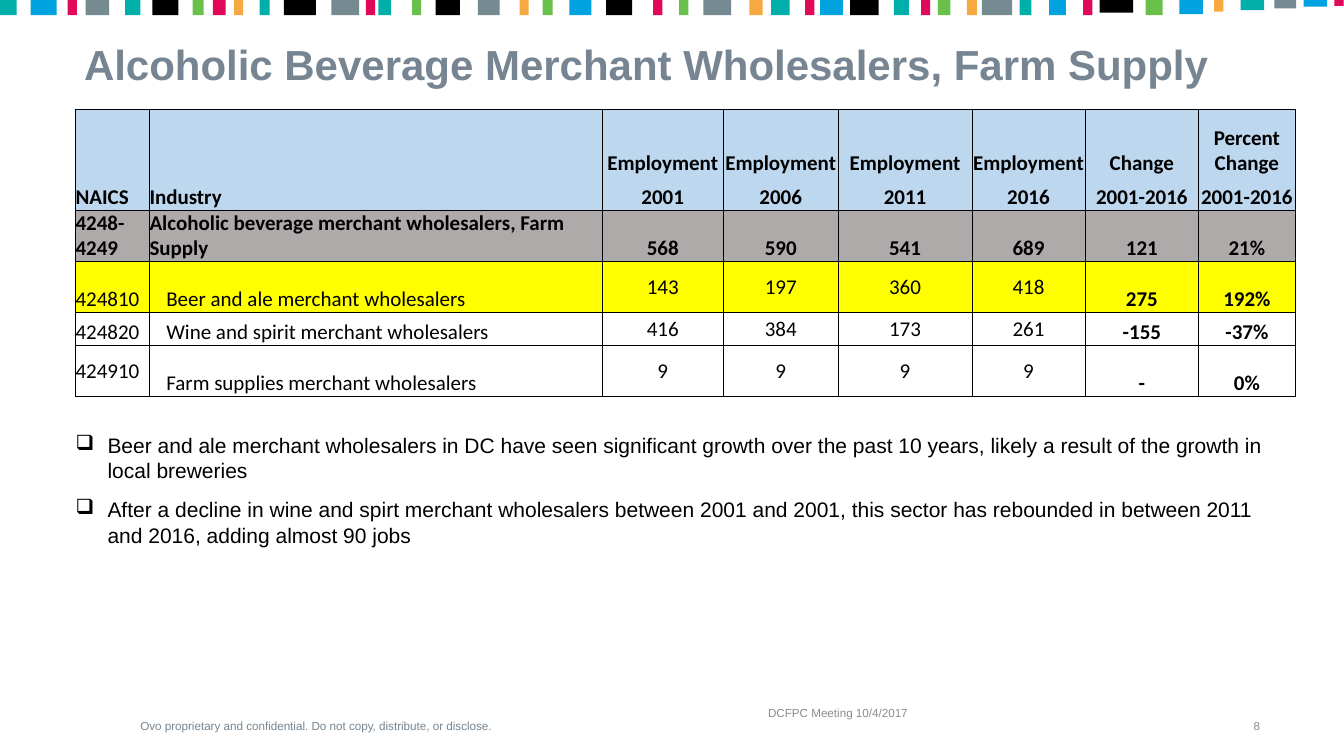
from lxml import etree
from pptx import Presentation
from pptx.dml.color import RGBColor
from pptx.enum.shapes import MSO_SHAPE
from pptx.enum.text import MSO_ANCHOR, PP_ALIGN
from pptx.oxml.ns import qn
from pptx.util import Inches, Pt

RECT = MSO_SHAPE.RECTANGLE
LEFT, CENTER, RIGHT = PP_ALIGN.LEFT, PP_ALIGN.CENTER, PP_ALIGN.RIGHT
TOP, MIDDLE, BOTTOM = MSO_ANCHOR.TOP, MSO_ANCHOR.MIDDLE, MSO_ANCHOR.BOTTOM

BLACK = RGBColor(0x00, 0x00, 0x00)
SLATE = RGBColor(0x76, 0x85, 0x91)
MUTED = RGBColor(0x8C, 0x8C, 0x8C)
HEADER_BLUE = RGBColor(0xBD, 0xD7, 0xEE)
TOTAL_GRAY = RGBColor(0xAE, 0xAA, 0xAA)
YELLOW = RGBColor(0xFF, 0xFF, 0x00)
TEAL = RGBColor(0x00, 0xAF, 0xAA)
SKY = RGBColor(0x00, 0xA2, 0xE0)
PINK = RGBColor(0xE1, 0x08, 0x59)
GRAY = RGBColor(0x76, 0x8A, 0x91)
GREEN = RGBColor(0x69, 0xC1, 0x4C)
AMBER = RGBColor(0xF6, 0xA9, 0x41)

BAR_HEIGHT = 0.18
BARS = [
    (0.1, 0.2, TEAL), (0.52, 0.31, SKY), (0.86, 0.11, PINK),
    (1.16, 0.28, GRAY), (1.58, 0.18, TEAL), (1.97, 0.31, BLACK),
    (2.36, 0.13, GREEN), (2.61, 0.15, PINK), (2.84, 0.11, AMBER),
    (3.15, 0.12, TEAL), (3.57, 0.38, BLACK), (4.11, 0.33, GRAY),
    (4.41, 0.11, PINK), (4.58, 0.15, TEAL), (4.96, 0.11, GREEN),
    (5.33, 0.29, BLACK), (5.82, 0.26, GRAY), (6.24, 0.11, AMBER),
    (6.52, 0.12, GREEN), (6.91, 0.26, SKY), (7.37, 0.31, BLACK),
    (7.83, 0.11, PINK), (8.14, 0.11, GREEN), (8.54, 0.33, GRAY),
    (9.0, 0.16, AMBER), (9.29, 0.22, TEAL), (9.64, 0.11, PINK),
    (9.9, 0.27, SKY), (10.29, 0.34, BLACK), (10.73, 0.18, TEAL),
    (11.02, 0.11, PINK), (11.24, 0.15, GREEN), (11.57, 0.12, AMBER),
    (11.87, 0.36, GRAY), (12.21, 0.14, TEAL), (12.59, 0.2, SKY),
    (12.95, 0.11, PINK), (13.29, 0.4, BLACK, 0.15), (13.74, 0.2, GREEN),
    (14.18, 0.28, SKY, 0.17), (14.51, 0.11, AMBER, 0.14),
    (14.91, 0.28, TEAL, 0.12), (15.3, 0.26, GRAY, 0.1),
    (15.66, 0.28, SKY, 0.08), (15.94, 0.11, PINK, 0.07),
]

COL_WIDTHS = [0.88, 5.39, 1.44, 1.37, 1.59, 1.35, 1.35, 1.15]
ROW_HEIGHTS = [0.8, 0.4, 0.61, 0.61, 0.39, 0.61]
ROW_FILLS = [HEADER_BLUE, HEADER_BLUE, TOTAL_GRAY, YELLOW, None, None]
HEADER_ROWS, BOLD_ROWS = 2, 3
ROWS = [
    ["", "", "Employment", "Employment", "Employment", "Employment",
     "Change", "Percent Change"],
    ["NAICS", "Industry", "2001", "2006", "2011", "2016", "2001-2016", "2001-2016"],
    ["4248-4249", "Alcoholic beverage merchant wholesalers, Farm Supply",
     "568", "590", "541", "689", "121", "21%"],
    ["424810", "Beer and ale merchant wholesalers",
     "143", "197", "360", "418", "275", "192%"],
    ["424820", "Wine and spirit merchant wholesalers",
     "416", "384", "173", "261", "-155", "-37%"],
    ["424910", "Farm supplies merchant wholesalers", "9", "9", "9", "9", "-", "0%"],
]
BULLETS = [
    "Beer and ale merchant wholesalers in DC have seen significant growth over the "
    "past 10 years, likely a result of the growth in local breweries",
    "After a decline in wine and spirt merchant wholesalers between 2001 and 2001, "
    "this sector has rebounded in between 2011 and 2016, adding almost 90 jobs",
]


def set_font(font, size, color, name="Arial", bold=False):
    values = {"size": Pt(size), "name": name, "bold": bold}
    for key, value in values.items():
        setattr(font, key, value)
    font.color.rgb = color


def add_bar(s, center, width, color, height=BAR_HEIGHT):
    sp = s.shapes.add_shape(RECT, Inches(center - width / 2), 0,
                            Inches(width), Inches(height))
    sp.shadow.inherit = False
    sp.fill.solid()
    sp.fill.fore_color.rgb = color
    sp.line.fill.background()


def set_title(s, text):
    sp = s.shapes.title
    frame = {"left": 0.9, "top": 0.33, "width": 14.2, "height": 0.94}
    for key, value in frame.items():
        setattr(sp, key, Inches(value))
    tf = sp.text_frame
    tf.vertical_anchor = MIDDLE
    p = tf.paragraphs[0]
    p.alignment = LEFT
    p.line_spacing = 0.9
    r = p.add_run()
    r.text = text
    set_font(r.font, 36, SLATE, bold=True)


def add_box(s, box, anchor, bottom=0):
    tf = s.shapes.add_textbox(*map(Inches, box)).text_frame
    values = {"word_wrap": True, "vertical_anchor": anchor, "margin_left": 0,
              "margin_right": 0, "margin_top": 0, "margin_bottom": Inches(bottom)}
    for key, value in values.items():
        setattr(tf, key, value)
    return tf


def add_footer(s, text, left, width, align, color, bottom=0):
    p = add_box(s, (left, 8.34, width, 0.39), BOTTOM, bottom).paragraphs[0]
    p.alignment = align
    r = p.add_run()
    r.text = text
    set_font(r.font, 10, color)


def add_bullets(s, texts):
    tf = add_box(s, (0.9, 5.15, 14.22, 1.58), TOP)
    for i, text in enumerate(texts):
        p = tf.add_paragraph() if i else tf.paragraphs[0]
        pPr = p._p.get_or_add_pPr()
        pPr.set("marL", str(Inches(0.38)))
        pPr.set("indent", str(-Inches(0.38)))
        etree.SubElement(pPr, qn("a:buChar"), char="❑")
        if i:
            p.space_before = Pt(12)
        r = p.add_run()
        r.text = text
        set_font(r.font, 18, BLACK)


def set_borders(cell, widths):
    tcPr = cell._tc.get_or_add_tcPr()
    for side, width in zip("LRTB", widths):
        ln = etree.SubElement(tcPr, qn("a:ln" + side), w=str(Pt(width)))
        if width:
            fill = etree.SubElement(ln, qn("a:solidFill"))
            etree.SubElement(fill, qn("a:srgbClr"), val=str(BLACK))
        else:
            etree.SubElement(ln, qn("a:noFill"))


def format_cell(cell, row, col):
    last_row, last_col = len(ROWS) - 1, len(COL_WIDTHS) - 1
    set_borders(cell, (1 if col == 0 else 0.5,
                       1 if col == last_col else 0.5,
                       1 if row == 0 else 0 if row == 1 else 0.5,
                       1 if row == last_row else 0 if row == 0 else 0.5))
    if ROW_FILLS[row]:
        cell.fill.solid()
        cell.fill.fore_color.rgb = ROW_FILLS[row]
    else:
        cell.fill.background()
    detail = row >= BOLD_ROWS
    centered = detail and (2 <= col <= 5 or (row == last_row and col == 0))
    values = {"margin_left": Inches(0.2) if detail and col == 1 else 0,
              "margin_right": 0, "margin_top": 0, "margin_bottom": 0,
              "vertical_anchor": MIDDLE if centered else BOTTOM}
    for key, value in values.items():
        setattr(cell, key, value)
    p = cell.text_frame.paragraphs[0]
    p.alignment = CENTER if col >= 2 else LEFT
    if ROWS[row][col]:
        r = p.add_run()
        r.text = ROWS[row][col]
        set_font(r.font, 18, BLACK, "Calibri", not detail or col >= 6)


def add_employment_table(s):
    table = s.shapes.add_table(
        len(ROWS), len(COL_WIDTHS), Inches(0.9), Inches(1.3),
        Inches(sum(COL_WIDTHS)), Inches(sum(ROW_HEIGHTS))).table
    table.horz_banding = False
    for column, width in zip(table.columns, COL_WIDTHS):
        column.width = Inches(width)
    for row, height in enumerate(ROW_HEIGHTS):
        table.rows[row].height = Inches(height)
        for col in range(len(COL_WIDTHS)):
            format_cell(table.cell(row, col), row, col)


def main():
    prs = Presentation()
    prs.slide_width, prs.slide_height = Inches(16), Inches(9)
    s = prs.slides.add_slide(prs.slide_layouts[5])
    for bar in BARS:
        add_bar(s, *bar)
    set_title(s, "Alcoholic Beverage Merchant Wholesalers, Farm Supply")
    add_employment_table(s)
    add_bullets(s, BULLETS)
    add_footer(s, "Ovo proprietary and confidential. Do not copy, distribute, or disclose.",
               1.27, 4.98, CENTER, SLATE)
    add_footer(s, "DCFPC Meeting 10/4/2017", 6.46, 7.03, CENTER, MUTED, 0.16)
    add_footer(s, "8", 14.04, 0.96, RIGHT, MUTED)
    prs.save("out.pptx")


if __name__ == "__main__":
    main()
